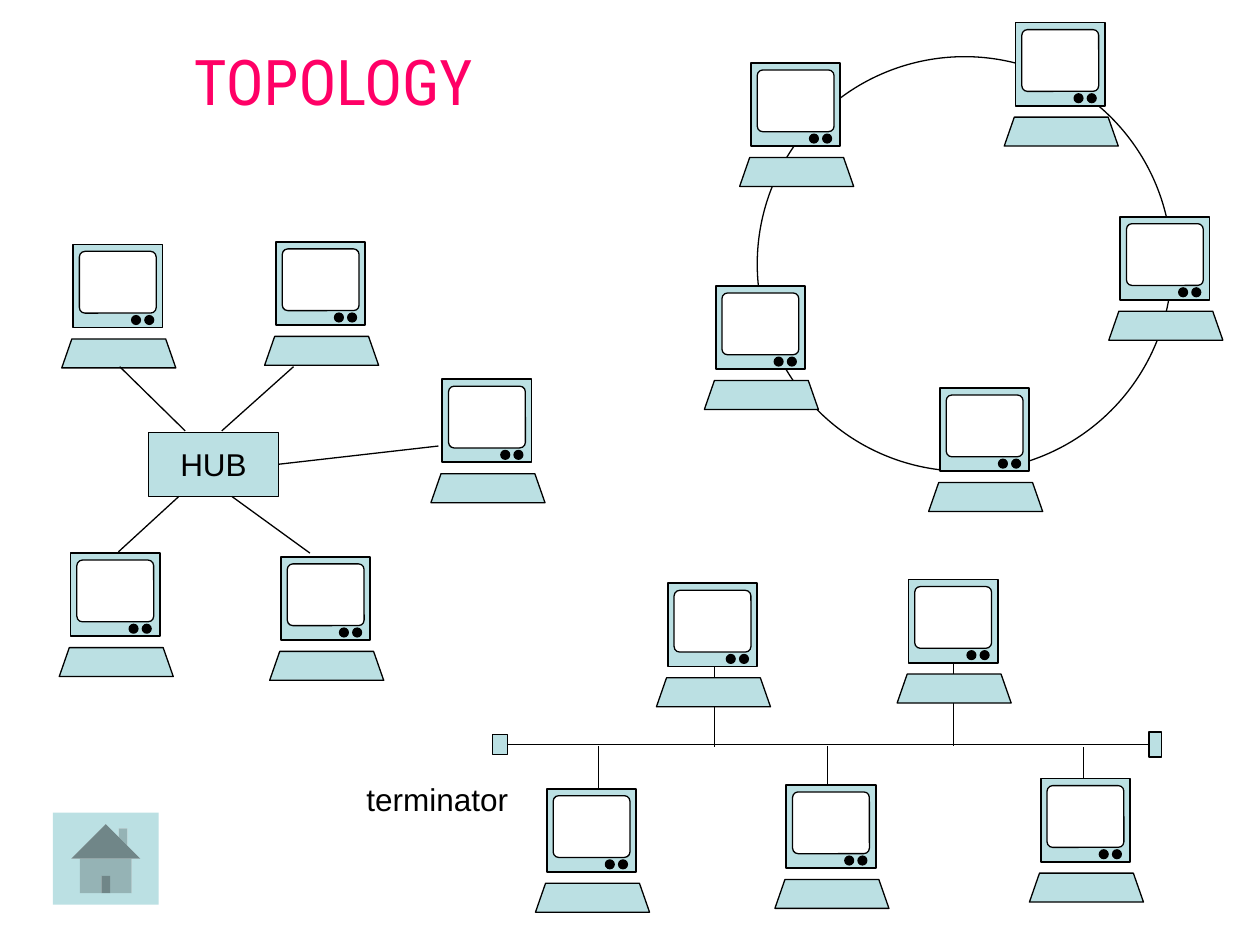
from lxml import etree
from pptx import Presentation
from pptx.dml.color import RGBColor
from pptx.enum.shapes import MSO_CONNECTOR, MSO_SHAPE
from pptx.enum.text import MSO_ANCHOR, MSO_AUTO_SIZE, PP_ALIGN
from pptx.oxml.ns import qn
from pptx.util import Inches, Pt

STRAIGHT = MSO_CONNECTOR.STRAIGHT
RECTANGLE, ROUNDED = MSO_SHAPE.RECTANGLE, MSO_SHAPE.ROUNDED_RECTANGLE
OVAL, HOME = MSO_SHAPE.OVAL, MSO_SHAPE.ACTION_BUTTON_HOME
CENTER, LEFT = PP_ALIGN.CENTER, PP_ALIGN.LEFT
TOP, MIDDLE = MSO_ANCHOR.TOP, MSO_ANCHOR.MIDDLE
FIT_SHAPE, FIT_NONE = MSO_AUTO_SIZE.SHAPE_TO_FIT_TEXT, MSO_AUTO_SIZE.NONE

PINK = RGBColor(0xFF, 0x00, 0x66)
PALE_BLUE = RGBColor(0xBB, 0xE0, 0xE3)
BLACK = RGBColor(0x00, 0x00, 0x00)
WHITE = RGBColor(0xFF, 0xFF, 0xFF)

COLUMNS, ROWS = 100, 75
RIGHT_SIDE, LEFT_SIDE = 3, 1

# Left column and top row of each monitor
STAR_COMPUTERS = [(5.8, 19.4), (21.9, 19.2), (5.6, 43.9), (22.3, 44.2), (35.1, 30.1)]
RING_COMPUTERS = [(59.6, 5), (56.8, 22.7), (74.6, 30.8), (88.9, 17.2), (80.6, 1.8)]
BUS_COMPUTERS = [(43.4, 62.6), (53, 46.3), (62.4, 62.3), (72.1, 46), (82.6, 61.8)]
# Start column and row, end column and row
HUB_CABLES = [(9.4, 43.8, 14.2, 39.4), (18.4, 39.4, 24.6, 43.9),
              (17.6, 34.2, 23.3, 29.1), (14.7, 34.2, 9.5, 29.1)]
# Column, start row, end row
BUS_DROPS = [(47.5, 59.2, 65.8), (65.7, 59.2, 65.7), (86, 59.3, 65.8),
             (56.7, 52.8, 59.3), (75.7, 52.6, 59.2)]


def write(frame, text, font="Arial", size=18, color=BLACK, align=LEFT,
          anchor=TOP, fit=FIT_NONE):
    frame.word_wrap = False
    frame.auto_size = fit
    frame.vertical_anchor = anchor
    para = frame.paragraphs[0]
    para.alignment = align
    span = para.add_run()
    span.text = text
    span.font.name = font
    span.font.size = Pt(size)
    span.font.color.rgb = color


class Sketch:
    """Draws on one slide; all lengths are grid columns and rows."""

    def __init__(self, deck):
        self.column = deck.slide_width / COLUMNS
        self.row = deck.slide_height / ROWS
        self.slide = deck.slides.add_slide(deck.slide_layouts[5])
        self.shapes = self.slide.shapes

    def place(self, *lengths):
        """Turn alternating columns and rows into slide lengths."""
        return [round(length * (self.row if index % 2 else self.column))
                for index, length in enumerate(lengths)]

    def style(self, shape, fill, line):
        shape.shadow.inherit = False
        if fill is None:
            shape.fill.background()
        else:
            shape.fill.solid()
            shape.fill.fore_color.rgb = fill
        if line:
            shape.line.color.rgb = BLACK
            shape.line.width = Pt(line)
        else:
            shape.line.fill.background()

    def title(self, text, *area, **text_format):
        title = self.shapes.title
        title.left, title.top, title.width, title.height = self.place(*area)
        write(title.text_frame, text, **text_format)

    def label(self, text, *area, **text_format):
        box = self.shapes.add_textbox(*self.place(*area))
        write(box.text_frame, text, **text_format)

    def shape(self, kind, *area, fill=PALE_BLUE, line=0.75, shapes=None):
        shape = (shapes or self.shapes).add_shape(kind, *self.place(*area))
        self.style(shape, fill, line)
        return shape

    def keyboard(self, left, top, shapes):
        corners = [(0.8, 0), (8.25, 0), (9.05, 2.3), (0, 2.3)]
        points = [self.place(left + x, top + y) for x, y in corners]
        outline = shapes.build_freeform(*points[0])
        outline.add_line_segments(points[1:], close=True)
        self.style(outline.convert_to_shape(), PALE_BLUE, 0.75)

    def computer(self, left, top, shapes=None):
        parts = (shapes or self.shapes).add_group_shape().shapes
        self.keyboard(left - 0.9, top + 7.5, parts)
        self.shape(RECTANGLE, left, top, 7.1, 6.6, line=1, shapes=parts)
        screen = self.shape(ROUNDED, left + 0.5, top + 0.55, 6.1, 4.9,
                            fill=WHITE, shapes=parts)
        screen.adjustments[0] = 0.09
        for offset in (4.65, 5.7):
            self.shape(OVAL, left + offset, top + 5.65, 0.7, 0.7,
                       fill=BLACK, shapes=parts)

    def cable(self, *ends):
        cable = self.shapes.add_connector(STRAIGHT, *self.place(*ends))
        cable.line.color.rgb = BLACK
        cable.line.width = Pt(0.75)
        etree.SubElement(cable._element.spPr, qn("a:effectLst"))
        return cable


def draw_star(sketch):
    for spot in STAR_COMPUTERS:
        sketch.computer(*spot)
    hub = sketch.shape(RECTANGLE, 11.8, 34.3, 10.3, 5.1)
    write(hub.text_frame, "HUB", align=CENTER, anchor=MIDDLE)
    for ends in HUB_CABLES:
        sketch.cable(*ends)
    sketch.cable(22.1, 36.5, 34.8, 35.4).begin_connect(hub, RIGHT_SIDE)


def draw_ring(sketch):
    ring = sketch.shapes.add_group_shape().shapes
    sketch.shape(OVAL, 60.1, 4.5, 32.9, 32.9, fill=None, shapes=ring)
    for spot in RING_COMPUTERS:
        sketch.computer(*spot, shapes=ring)


def draw_bus(sketch):
    left_terminator = sketch.shape(RECTANGLE, 39.1, 58.3, 1.2, 1.6)
    right_terminator = sketch.shape(RECTANGLE, 91.2, 58.1, 1, 2)
    backbone = sketch.cable(40.3, 59.1, 91.2, 59.1)
    backbone.begin_connect(left_terminator, RIGHT_SIDE)
    backbone.end_connect(right_terminator, LEFT_SIDE)
    for column, start, end in BUS_DROPS:
        sketch.cable(column, start, column, end)
    for spot in BUS_COMPUTERS:
        sketch.computer(*spot)
    sketch.label("terminator", 28.1, 61.4, 13.3, 4, fit=FIT_SHAPE)


def main():
    deck = Presentation()
    deck.slide_width, deck.slide_height = Inches(10), Inches(7.5)
    sketch = Sketch(deck)
    sketch.title("TOPOLOGY", 3.1, 2.9, 46.7, 10.5, font="Roboto Condensed",
                 size=36, color=PINK, align=CENTER)
    draw_star(sketch)
    draw_ring(sketch)
    draw_bus(sketch)
    sketch.shape(HOME, 4.2, 64.5, 8.4, 7.3, line=None)
    deck.save("out.pptx")


if __name__ == "__main__":
    main()
